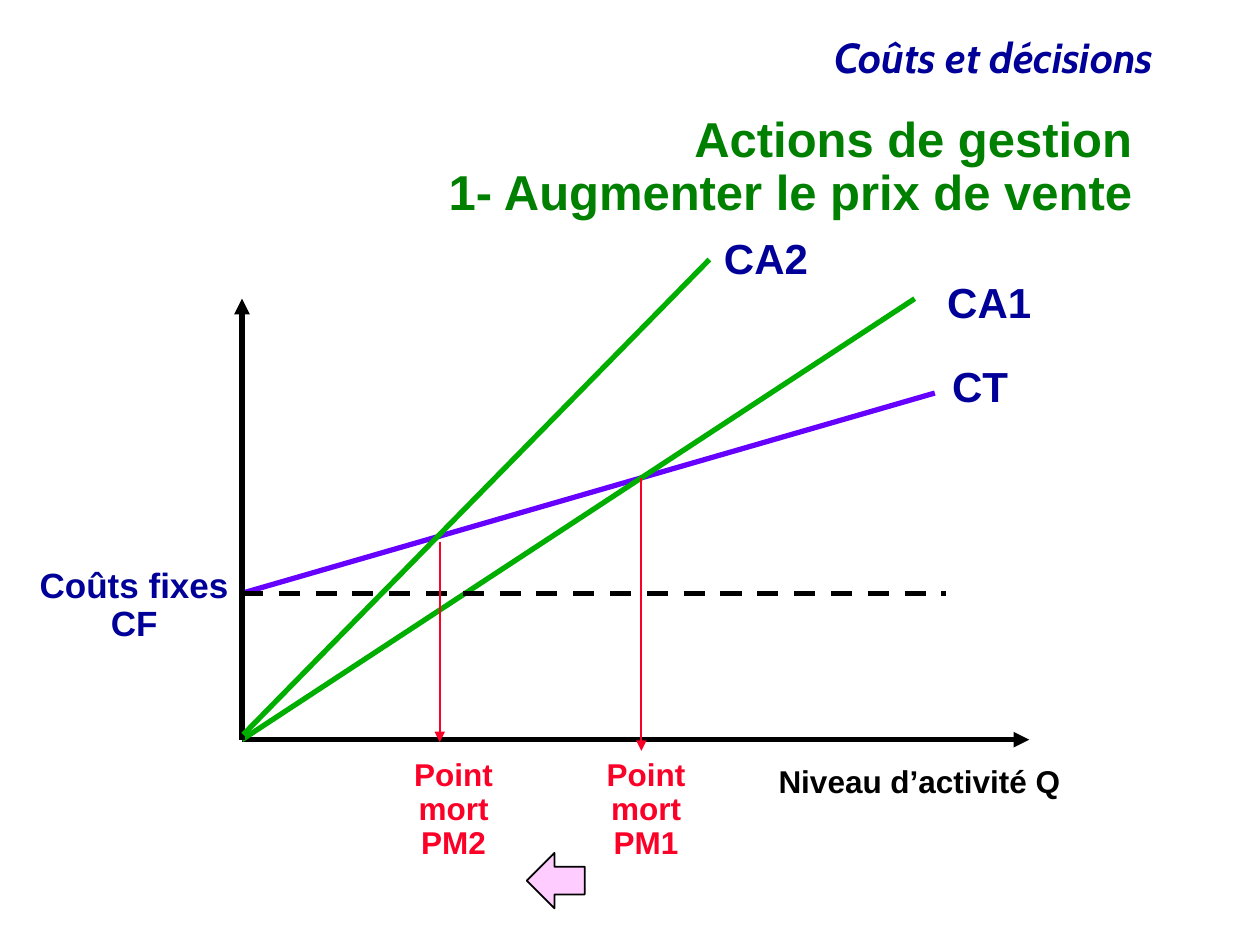
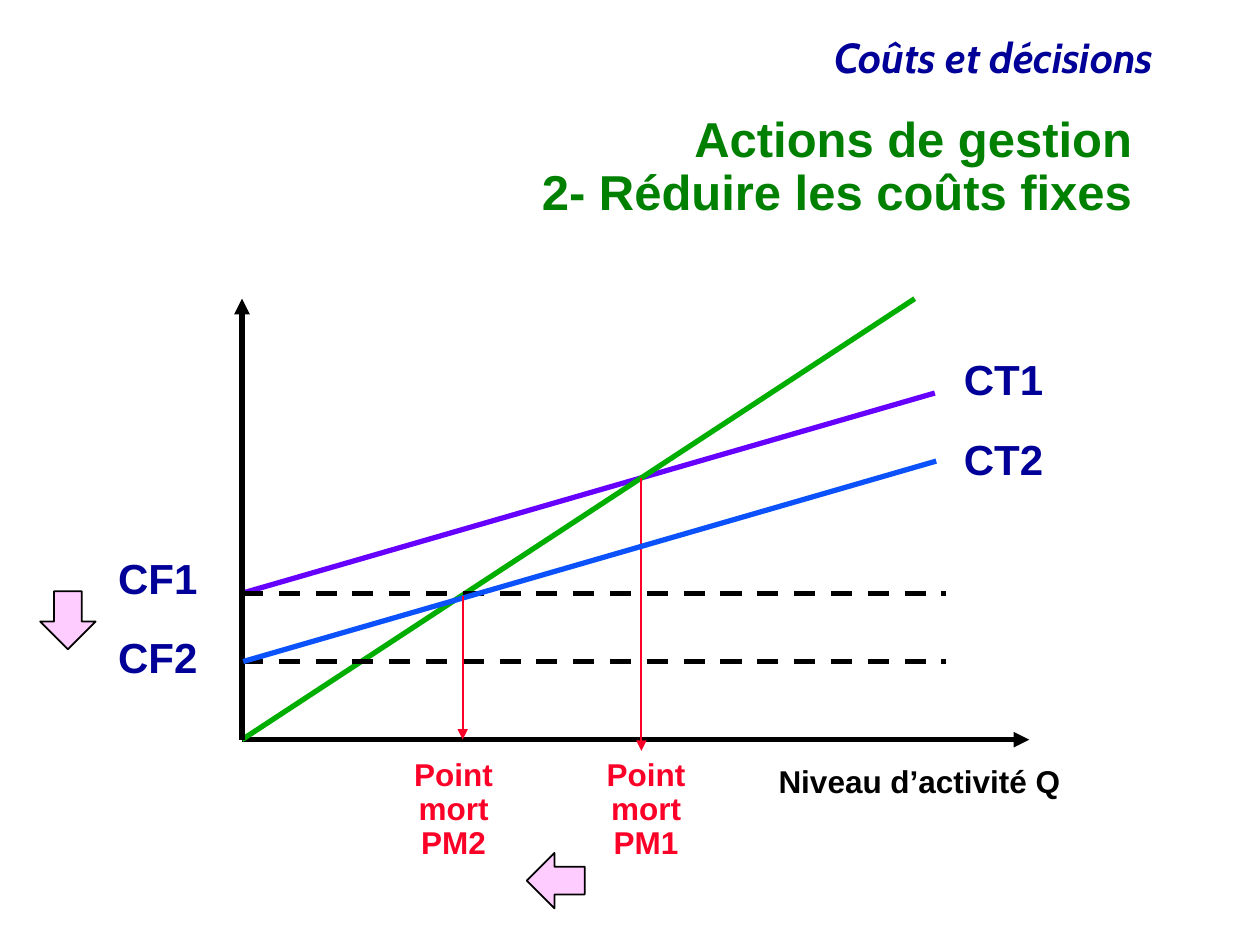
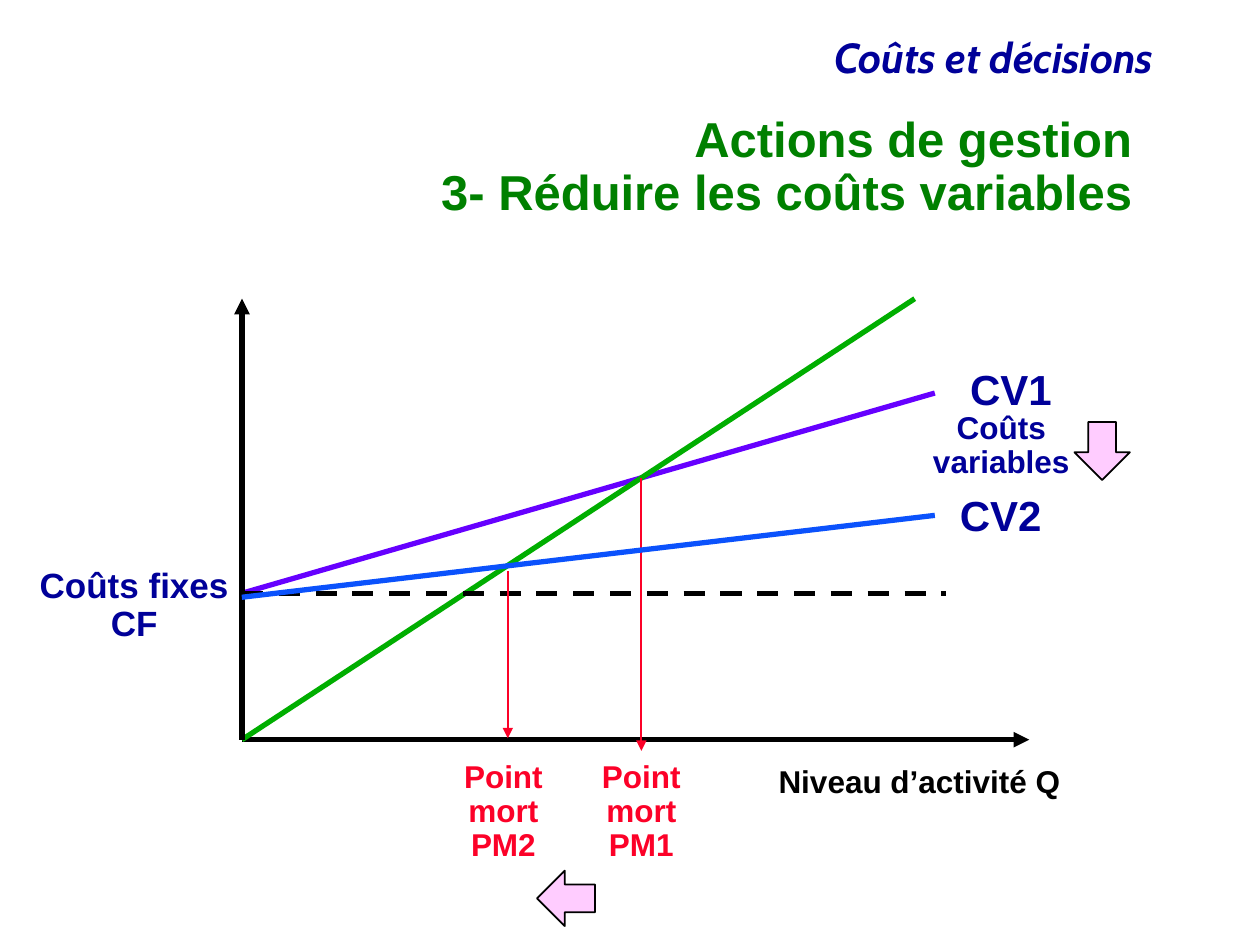
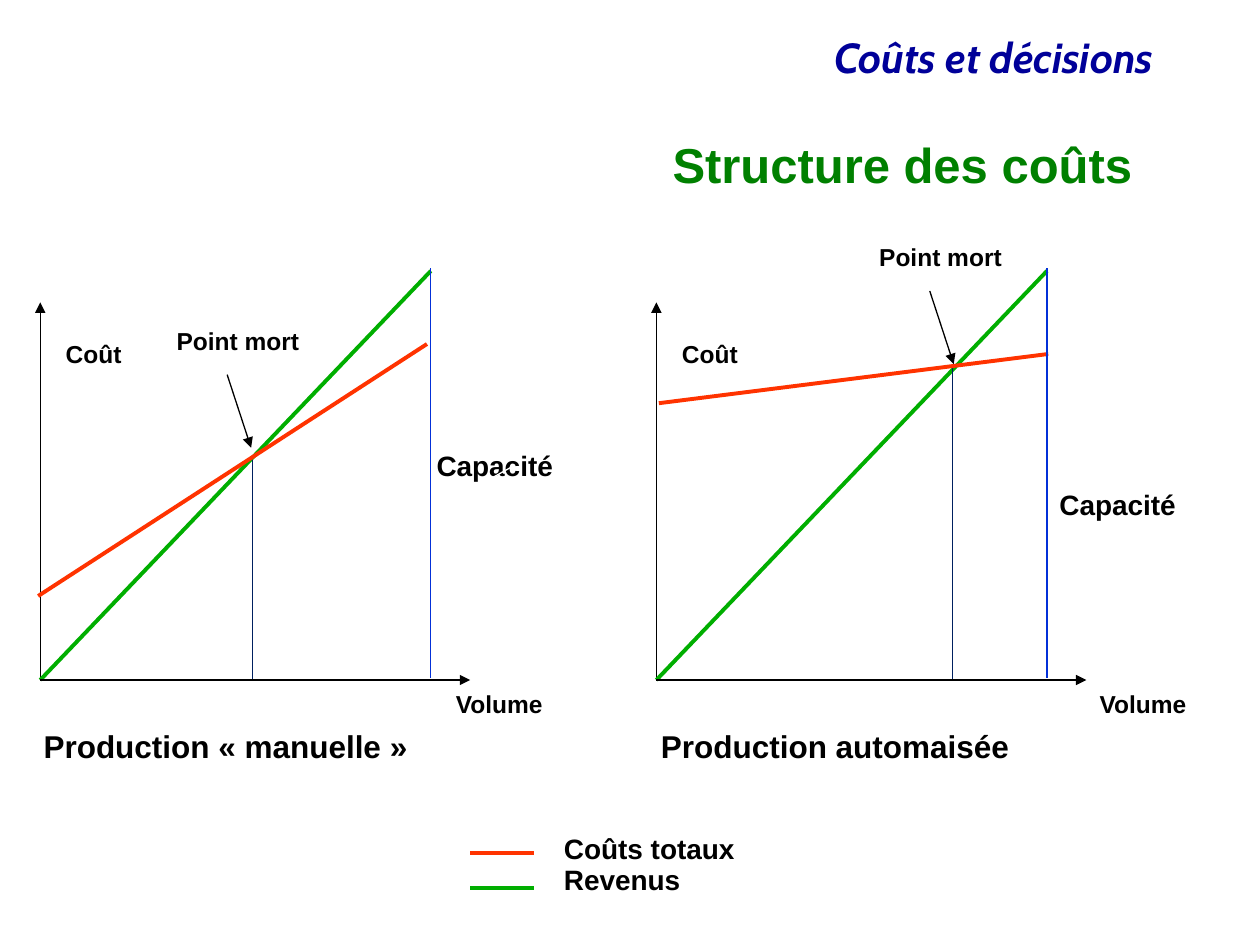
from pptx import Presentation
from pptx.dml.color import RGBColor
from pptx.enum.dml import MSO_LINE
from pptx.enum.shapes import MSO_CONNECTOR, MSO_SHAPE
from pptx.enum.text import MSO_ANCHOR, MSO_AUTO_SIZE, PP_ALIGN
from pptx.oxml.ns import qn
from pptx.util import Pt
from lxml import etree

LEFT, CENTER, RIGHT = PP_ALIGN.LEFT, PP_ALIGN.CENTER, PP_ALIGN.RIGHT
MIDDLE = MSO_ANCHOR.MIDDLE
FIT, FIXED = MSO_AUTO_SIZE.SHAPE_TO_FIT_TEXT, MSO_AUTO_SIZE.NONE
STRAIGHT, DASH = MSO_CONNECTOR.STRAIGHT, MSO_LINE.DASH
DOWN_ARROW = MSO_SHAPE.DOWN_ARROW

COLORS = {
    "white": "FFFFFF", "black": "000000", "navy": "000099", "title": "008000",
    "violet": "6600FF", "green": "00AE00", "blue": "0B52FC", "red": "FC0128",
    "pink": "FFCCFF", "orange": "FF3300", "capacity": "0330D8", "threshold": "002060",
}

# Shared frame of the three break-even slides
HEADER = "Coûts et décisions"
ORIGIN_X, ORIGIN_Y = 138.3, 422.7
AXIS_TOP, AXIS_RIGHT = 170.7, 588.2
FIXED_COST_Y, DASH_RIGHT = 339, 540.7
ARROW_WIDTH, ARROW_HEIGHT = 31.7, 33.1
FIXED_COSTS_LABEL = (["Coûts fixes", "CF"], 15.1, 321.1, 123.1, 51.1, 20)

# lines: colour, start, end; drop: x, top, bottom; labels: text, left, top, width
# arrows: left, top, rotation; notes: paragraphs, left, top, width, height, size
BREAK_EVEN_SLIDES = [
    {
        "title": "Actions de gestion\n1- Augmenter le prix de vente",
        "lines": [("green", (139, 419.8), (405.4, 148.3))],
        "dashes": [],
        "drop": (251.3, 309.6, 424.1),
        "points": [("Point mort PM1", 326, 430.3), ("Point mort PM2", 216, 430.3)],
        "labels": [("CA1", 534.2, 157.7, 63.4), ("CA2", 406.6, 132.5, 63.4),
                   ("CT", 537, 206, 46.8)],
        "notes": [FIXED_COSTS_LABEL],
        "arrows": [(301.7, 486.7, 90)],
    },
    {
        "title": "Actions de gestion\n2- Réduire les coûts fixes",
        "lines": [("blue", (139, 378), (535, 263.5))],
        "dashes": [378],
        "drop": (264.4, 340.6, 422.6),
        "points": [("Point mort PM1", 326, 430.3), ("Point mort PM2", 216, 430.3)],
        "labels": [("CF1", 60.4, 315.4, 59.8), ("CF2", 60.4, 360.7, 59.8),
                   ("CT1", 543.7, 202, 59.8), ("CT2", 543.7, 247.7, 59.8)],
        "notes": [],
        "arrows": [(23, 337.9, 0), (301.7, 486.7, 90)],
    },
    {
        "title": "Actions de gestion\n3- Réduire les coûts variables",
        "lines": [("blue", (138.2, 341.3), (534.2, 294.5))],
        "dashes": [],
        "drop": (290.2, 326.2, 421.9),
        "points": [("Point mort\nPM1", 323.3, 431.3), ("Point mort PM2", 244.5, 431.3)],
        "labels": [("CV2", 541.4, 279.2, 61.9), ("CV1", 547.3, 207.4, 61.9)],
        "notes": [FIXED_COSTS_LABEL,
                  (["Coûts variables"], 518.2, 232.3, 108, 46.8, 18)],
        "arrows": [(614, 241.2, 0), (307.6, 496.8, 90)],
    },
]

# Cost structure: x values are offsets from each diagram's own origin
STRUCTURE_TITLE = "Structure des coûts"
BASE_Y = 388.6
CAPACITY_X = 223.2
DIAGRAMS = [
    {
        "x": 375.1, "caption": "Production automaisée", "caption_at": (-4.5, 215.3),
        "cost": ((1.4, 230.4), (223.9, 202.3)), "threshold": (169.2, 208.8),
        "point_at": (120.2, 136.8), "capacity_at": (223.2, 277.2), "volume_x": 246.2,
    },
    {
        "x": 23, "caption": "Production « manuelle »", "caption_at": (-5.2, 224.6),
        "cost": ((-1.2, 340.6), (221, 196.6)), "threshold": (121.4, 262.8),
        "point_at": (70.8, 184.6), "capacity_at": (219.4, 254.7), "volume_x": 230.4,
    },
]
LEGEND = [("Coûts totaux", "orange", 487.4), ("Revenus", "green", 507.6)]
CAPACITY_POINTER = ((294.4, 265.7), (252, 289.4))


def rgb(name):
    return RGBColor.from_string(COLORS[name])


def add_text(page, paragraphs, left, top, width, height, size, color="black",
             align=LEFT, wrap=False, font="Arial", italic=False, fit=FIT):
    box = page.shapes.add_textbox(Pt(left), Pt(top), Pt(width), Pt(height))
    frame = box.text_frame
    frame.word_wrap = wrap
    frame.auto_size = fit
    for index, text in enumerate(paragraphs):
        para = frame.add_paragraph() if index else frame.paragraphs[0]
        para.alignment = align
        para.line_spacing = 0.9
        for part_index, part in enumerate(text.split("\n")):
            if part_index:
                para.add_line_break()
            span = para.add_run()
            span.text = part
            span.font.name = font
            span.font.size = Pt(size)
            span.font.bold = True
            span.font.italic = italic
            span.font.color.rgb = rgb(color)
    return box


def add_line(page, color, start, end, width, arrow=False, dashed=False):
    connector = page.shapes.add_connector(STRAIGHT, *(Pt(v) for v in (*start, *end)))
    connector.line.color.rgb = rgb(color)
    connector.line.width = Pt(width)
    if dashed:
        connector.line.dash_style = DASH
    properties = connector._element.spPr
    if arrow:
        etree.SubElement(properties.find(qn("a:ln")), qn("a:tailEnd"), type="triangle")
    etree.SubElement(properties, qn("a:effectLst"))


def add_arrow(page, left, top, rotation):
    arrow = page.shapes.add_shape(DOWN_ARROW, Pt(left), Pt(top),
                                  Pt(ARROW_WIDTH), Pt(ARROW_HEIGHT))
    arrow.rotation = rotation
    arrow.shadow.inherit = False
    arrow.fill.solid()
    arrow.fill.fore_color.rgb = rgb("pink")
    arrow.line.color.rgb = rgb("black")
    arrow.line.width = Pt(1)


def add_page(deck, title):
    page = deck.slides.add_slide(deck.slide_layouts[6])
    page.background.fill.solid()
    page.background.fill.fore_color.rgb = rgb("white")
    add_text(page, [HEADER], 90, 18, 576, 33.1, 24, "navy", RIGHT, True, "Cabin", True)
    box = add_text(page, [title], 84, 78, 570, 36, 28, "title", RIGHT, True, fit=FIXED)
    box.text_frame.vertical_anchor = MIDDLE
    return page


def add_break_even(deck, content):
    page = add_page(deck, content["title"])
    origin = (ORIGIN_X, ORIGIN_Y)

    # Axes and the lines every slide starts from
    add_line(page, "black", origin, (AXIS_RIGHT, ORIGIN_Y), 3, arrow=True)
    add_line(page, "violet", (ORIGIN_X, FIXED_COST_Y), (534.2, 224.6), 3)
    add_line(page, "green", origin, (522.7, AXIS_TOP), 3)
    add_line(page, "red", (366.5, 272.9), (366.5, 429.1), 1, arrow=True)
    add_line(page, "black", origin, (ORIGIN_X, AXIS_TOP), 3, arrow=True)
    add_text(page, ["Niveau d’activité Q"], 437.8, 434.2, 177.1, 26.6, 18)
    for y in [FIXED_COST_Y] + content["dashes"]:
        add_line(page, "black", (ORIGIN_X, y), (DASH_RIGHT, y), 3, dashed=True)

    # The change and its new break-even point
    for color, start, end in content["lines"]:
        add_line(page, color, start, end, 3)
    x, top, bottom = content["drop"]
    add_line(page, "red", (x, top), (x, bottom), 1, arrow=True)

    # Labels and arrows
    for text, left, top in content["points"]:
        add_text(page, [text], left, top, 86.4, 66.2, 18, "red", CENTER, True)
    for text, left, top, width in content["labels"]:
        add_text(page, [text], left, top, width, 33.1, 24, "navy")
    for paragraphs, left, top, width, height, size in content["notes"]:
        add_text(page, paragraphs, left, top, width, height, size, "navy", CENTER,
                 wrap=len(paragraphs) == 1)
    for arrow in content["arrows"]:
        add_arrow(page, *arrow)


def add_diagram(page, diagram):
    x = diagram["x"]
    origin = (x, BASE_Y)
    capacity_x = x + CAPACITY_X

    # Axes, revenue, cost and capacity
    add_line(page, "black", origin, (x, 172.8), 0.75, arrow=True)
    add_line(page, "green", origin, (capacity_x, 154.8), 2.25)
    threshold_x, threshold_y = diagram["threshold"]
    add_line(page, "threshold", (x + threshold_x, threshold_y),
             (x + threshold_x, BASE_Y), 0.75)
    start, end = ((x + offset, y) for offset, y in diagram["cost"])
    add_line(page, "orange", start, end, 2.25)
    add_line(page, "capacity", (capacity_x, 153.4), (capacity_x, 387.4), 0.75)
    add_line(page, "black", origin, (x + 245.7, BASE_Y), 0.75, arrow=True)

    # Break-even label with its pointer
    offset, top = diagram["point_at"]
    left = x + offset
    add_text(page, ["Point mort"], left, top, 85.7, 23, 14)
    add_line(page, "black", (left + 36, top + 29.5), (left + 49.7, top + 71.3), 0.75,
             arrow=True)

    # Other labels
    add_text(page, ["Coût"], x + 7.5, 192.2, 50, 22.3, 14)
    add_text(page, ["Volume"], x + diagram["volume_x"], 392.2, 64.8, 22.3, 14)
    offset, top = diagram["capacity_at"]
    add_text(page, ["Capacité"], x + offset, top, 82.1, 24.5, 16)
    offset, width = diagram["caption_at"]
    add_text(page, [diagram["caption"]], x + offset, 414.4, width, 26.6, 18)


def add_structure(deck):
    page = add_page(deck, STRUCTURE_TITLE)
    for diagram in DIAGRAMS:
        add_diagram(page, diagram)
    add_line(page, "white", *CAPACITY_POINTER, 0.75, arrow=True)
    add_text(page, [name for name, _, _ in LEGEND], 315.2, 474, 113, 42.5, 16)
    for _, color, y in LEGEND:
        add_line(page, color, (268.6, y), (305.3, y), 2.25)


def main():
    deck = Presentation()
    deck.slide_width, deck.slide_height = Pt(720), Pt(540)
    for content in BREAK_EVEN_SLIDES:
        add_break_even(deck, content)
    add_structure(deck)
    deck.save("out.pptx")


if __name__ == "__main__":
    main()
